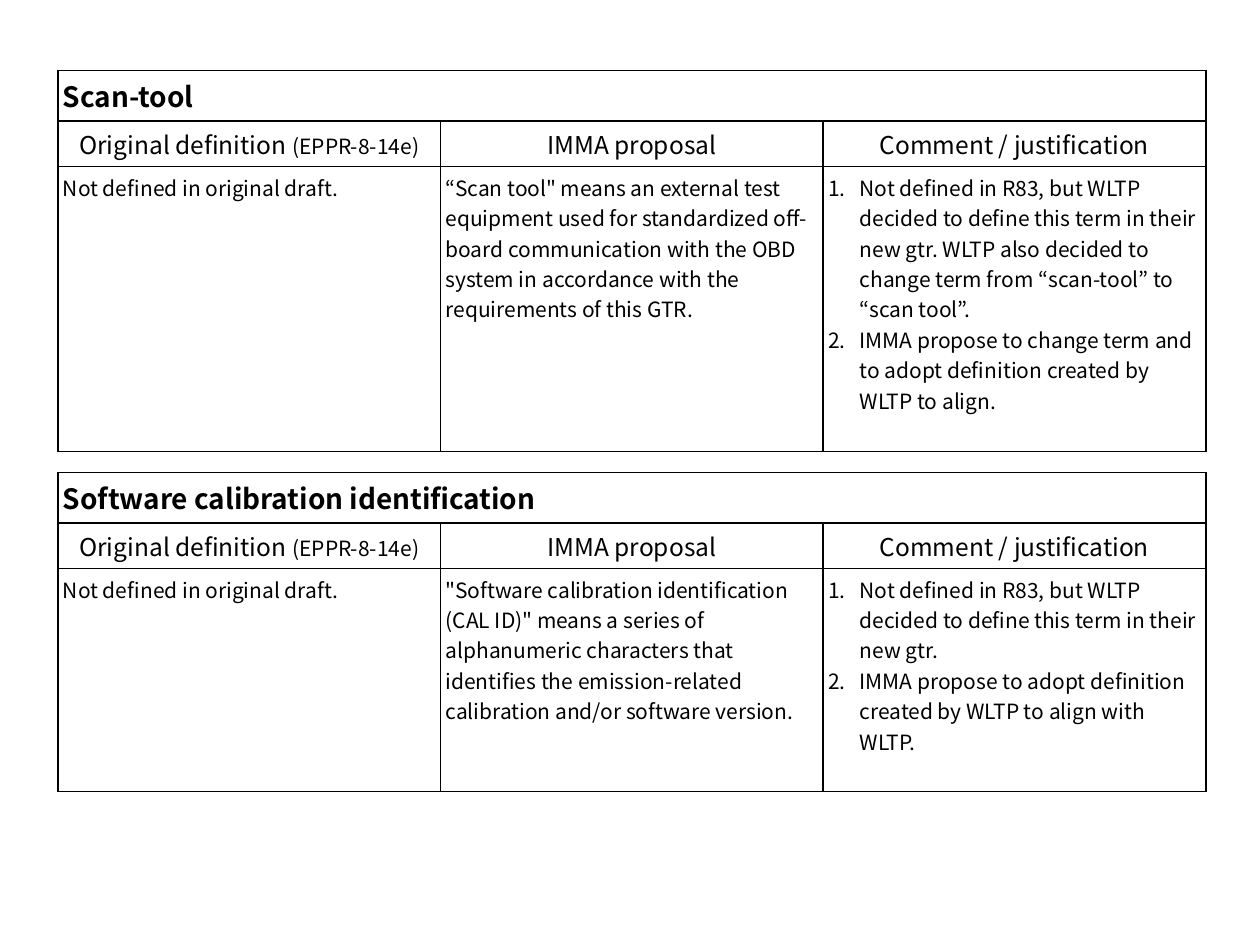
from dataclasses import dataclass

from lxml import etree
from pptx import Presentation
from pptx.dml.color import RGBColor
from pptx.enum.text import PP_ALIGN
from pptx.oxml.ns import qn
from pptx.util import Inches, Pt

CENTER = PP_ALIGN.CENTER
BLACK = RGBColor(0, 0, 0)
FONT = "Noto Sans CJK JP"
LEFT, WIDTH, COLS = 0.46, 9.11, 3
PAD = Inches(0.04)
HEAD = [
    [("Original definition ", 14), ("(EPPR-8-14e)", 12)],
    [("IMMA proposal", 14)],
    [("Comment / justification", 14)],
]


@dataclass
class Term:
    name: str
    top: float
    rows: list[float]
    draft: str
    offer: str
    notes: list[str]


TERMS = [
    Term(
        "Scan-tool", 0.56, [0.4, 0.36, 2.26],
        "Not defined in original draft.",
        "“Scan tool\" means an external test equipment used for standardized "
        "off-board communication with the OBD system in accordance with the "
        "requirements of this GTR.",
        ["Not defined in R83, but WLTP decided to define this term in their new "
         "gtr. WLTP also decided to change term from “scan-tool” to “scan tool”.",
         "IMMA propose to change term and to adopt definition created by WLTP "
         "to align."],
    ),
    Term(
        "Software calibration identification", 3.75, [0.4, 0.36, 1.77],
        "Not defined in original draft.",
        "\"Software calibration identification (CAL ID)\" means a series of "
        "alphanumeric characters that identifies the emission-related "
        "calibration and/or software version.",
        ["Not defined in R83, but WLTP decided to define this term in their new "
         "gtr.",
         "IMMA propose to adopt definition created by WLTP to align with WLTP."],
    ),
]


def add_run(para, text: str, size: int, bold: bool = False) -> None:
    run = para.add_run()
    run.text = text
    font = run.font
    font.name, font.size, font.bold = FONT, Pt(size), bold
    font.color.rgb = BLACK


def frame_cell(cell) -> None:
    """Give a cell its padding, thin black borders and no fill."""
    cell.margin_left = cell.margin_right = PAD
    cell.margin_top = cell.margin_bottom = PAD
    props = cell._tc.get_or_add_tcPr()
    for side in ("lnL", "lnR", "lnT", "lnB"):
        line = etree.SubElement(props, qn(f"a:{side}"), w=str(Pt(1)))
        fill = etree.SubElement(line, qn("a:solidFill"))
        etree.SubElement(fill, qn("a:srgbClr"), val=str(BLACK))
    cell.fill.background()


def number(para) -> None:
    """Turn a paragraph into an item of a numbered list."""
    props = para._p.get_or_add_pPr()
    props.set("marL", str(Inches(0.25)))
    props.set("indent", str(-Inches(0.25)))
    etree.SubElement(props, qn("a:buFont"), typeface=FONT)
    etree.SubElement(props, qn("a:buAutoNum"), type="arabicPeriod")


def add_term(slide, term: Term) -> None:
    table = slide.shapes.add_table(
        len(term.rows), COLS, Inches(LEFT), Inches(term.top),
        Inches(WIDTH), Inches(sum(term.rows))).table
    table.first_row = table.horz_banding = False
    for row, high in zip(table.rows, term.rows):
        row.height = Inches(high)
    for cell in table.iter_cells():
        frame_cell(cell)

    title = table.cell(0, 0)
    title.merge(table.cell(0, COLS - 1))
    add_run(title.text_frame.paragraphs[0], term.name, 16, True)

    for col, parts in enumerate(HEAD):
        para = table.cell(1, col).text_frame.paragraphs[0]
        para.alignment = CENTER
        for text, size in parts:
            add_run(para, text, size)

    for col, text in enumerate((term.draft, term.offer)):
        add_run(table.cell(2, col).text_frame.paragraphs[0], text, 12)

    frame = table.cell(2, 2).text_frame
    for pos, note in enumerate(term.notes):
        para = frame.add_paragraph() if pos else frame.paragraphs[0]
        number(para)
        add_run(para, note, 12)


def main() -> None:
    deck = Presentation()
    deck.slide_width, deck.slide_height = Inches(10), Inches(7.5)
    slide = deck.slides.add_slide(deck.slide_layouts[6])
    for term in TERMS:
        add_term(slide, term)
    deck.save("out.pptx")


if __name__ == "__main__":
    main()
